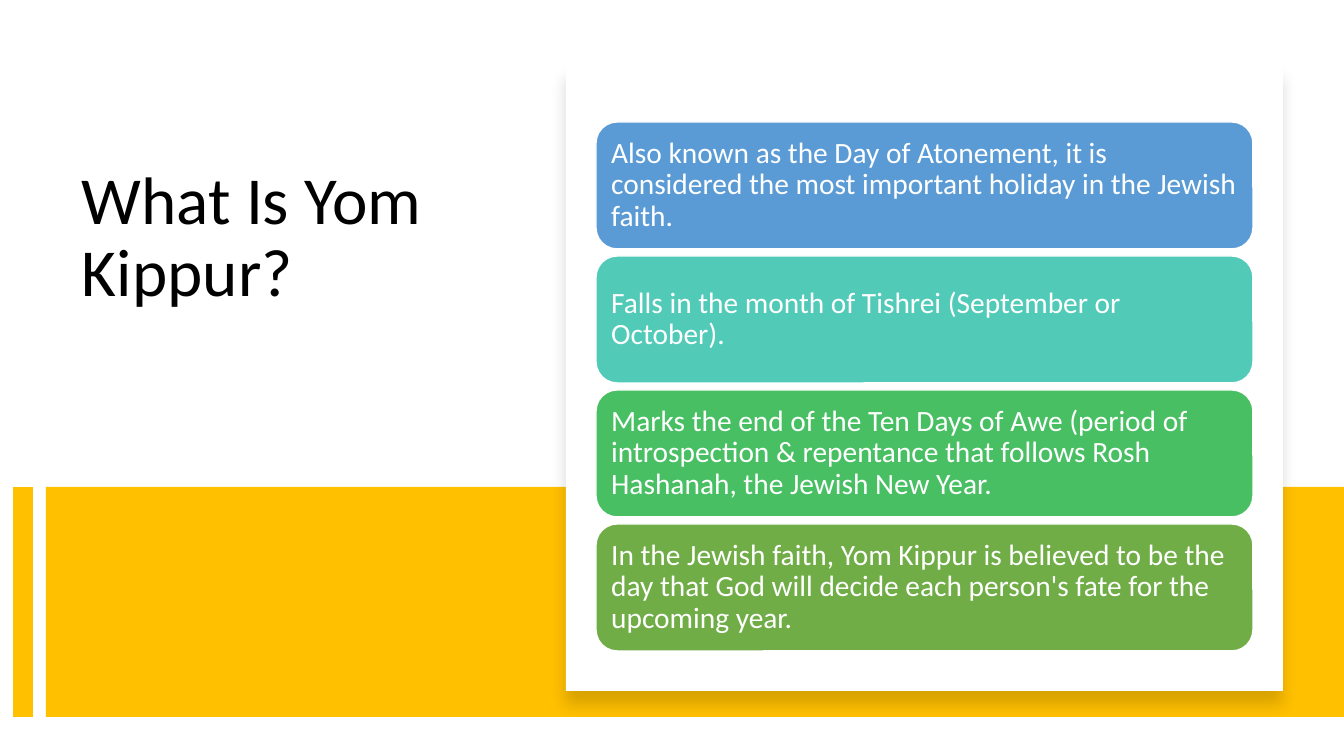
"""Build the Yom Kippur introduction slide."""
from lxml import etree
from pptx import Presentation
from pptx import util as u
from pptx.dml.color import RGBColor
from pptx.enum import shapes, text
from pptx.oxml import ns

TITLE = "What Is Yom Kippur?"
FACTS = [
    ("Also known as the Day of Atonement, it is considered the most important "
     "holiday in the Jewish faith.", "5B9BD5"),
    ("Falls in the month of Tishrei (September or October).", "52CAB8"),
    ("Marks the end of the\u00a0Ten Days of Awe (period of introspection & repentance "
     "that follows Rosh Hashanah, the Jewish New Year.", "49BF64"),
    ("In the Jewish faith, Yom Kippur is believed to be the day that God will "
     "decide each person's fate for the upcoming year.", "70AD47"),
]
THEME = {"font": "Calibri", "ink": "000000", "paper": "FFFFFF", "accent": "FFC000",
         "title": 48, "body": 21, "stripe": 14, "outline": 1}

WIDTH, HEIGHT = 1344, 756
BAND_LEFT, BAND_TOP, BAND_HEIGHT = 46, 487, 230
STRIPE_X = 23
TITLE_BOX = (72, 161, 418, 296)
CARD = (566, 65, 717, 626)
FACT_LEFT, FACT_TOP, FACT_WIDTH, FACT_HEIGHT, FACT_GAP = 596, 122, 657, 127, 7


def px(*values):
    return [u.Emu(round(v * 914400 / 100.8)) for v in values]


def rgb(name):
    return RGBColor.from_string(THEME.get(name, name))


def add_box(s, kind, box, fill, line=None):
    sp = s.shapes.add_shape(kind, *px(*box))
    sp.shadow.inherit = False
    sp.fill.solid()
    sp.fill.fore_color.rgb = rgb(fill)
    if line:
        sp.line.color.rgb = rgb(line)
        sp.line.width = u.Pt(THEME["outline"])
    else:
        sp.line.fill.background()
    return sp


def write(sp, content, size="body", color="paper", anchor="MIDDLE", inset=(9, 9)):
    tf = sp.text_frame
    tf.word_wrap = True
    tf.vertical_anchor = text.MSO_ANCHOR[anchor]
    tf.margin_left, tf.margin_top = tf.margin_right, tf.margin_bottom = px(*inset)
    p = tf.paragraphs[0]
    p.alignment = text.PP_ALIGN.LEFT
    p.line_spacing = 0.9
    r = p.add_run()
    r.text = content
    r.font.name = THEME["font"]
    r.font.size = u.Pt(THEME[size])
    r.font.color.rgb = rgb(color)


def effects(sp):
    props = sp._element.spPr
    found = props.find(ns.qn("a:effectLst"))
    return etree.SubElement(props, ns.qn("a:effectLst")) if found is None else found


def add_shadow(sp, blur=11, distance=10, angle=90, opacity=15):
    shadow = etree.SubElement(
        effects(sp), ns.qn("a:outerShdw"), blurRad=str(u.Pt(blur)),
        dist=str(u.Pt(distance)), dir=str(angle * 60000), algn="t", rotWithShape="0")
    color = etree.SubElement(shadow, ns.qn("a:srgbClr"), val=THEME["ink"])
    etree.SubElement(color, ns.qn("a:alpha"), val=str(opacity * 1000))


def main():
    prs = Presentation()
    prs.slide_width, prs.slide_height = px(WIDTH, HEIGHT)
    s = prs.slides.add_slide(prs.slide_layouts[6])
    rect, rounded = shapes.MSO_SHAPE.RECTANGLE, shapes.MSO_SHAPE.ROUNDED_RECTANGLE

    write(s.shapes.add_textbox(*px(*TITLE_BOX)), TITLE, size="title", color="ink",
          anchor="TOP", inset=(10, 5))

    add_box(s, rect, (BAND_LEFT, BAND_TOP, WIDTH - BAND_LEFT, BAND_HEIGHT), "accent")
    stripe = s.shapes.add_connector(
        shapes.MSO_CONNECTOR.STRAIGHT,
        *px(STRIPE_X, BAND_TOP, STRIPE_X, BAND_TOP + BAND_HEIGHT))
    stripe.line.color.rgb = rgb("accent")
    stripe.line.width = u.Pt(THEME["stripe"])
    effects(stripe)

    add_shadow(add_box(s, rect, CARD, "paper"))
    for i, (fact, fill) in enumerate(FACTS):
        top = FACT_TOP + i * (FACT_HEIGHT + FACT_GAP)
        box = (FACT_LEFT, top, FACT_WIDTH, FACT_HEIGHT)
        write(add_box(s, rounded, box, fill, line="paper"), fact)

    prs.save("out.pptx")


if __name__ == "__main__":
    main()
